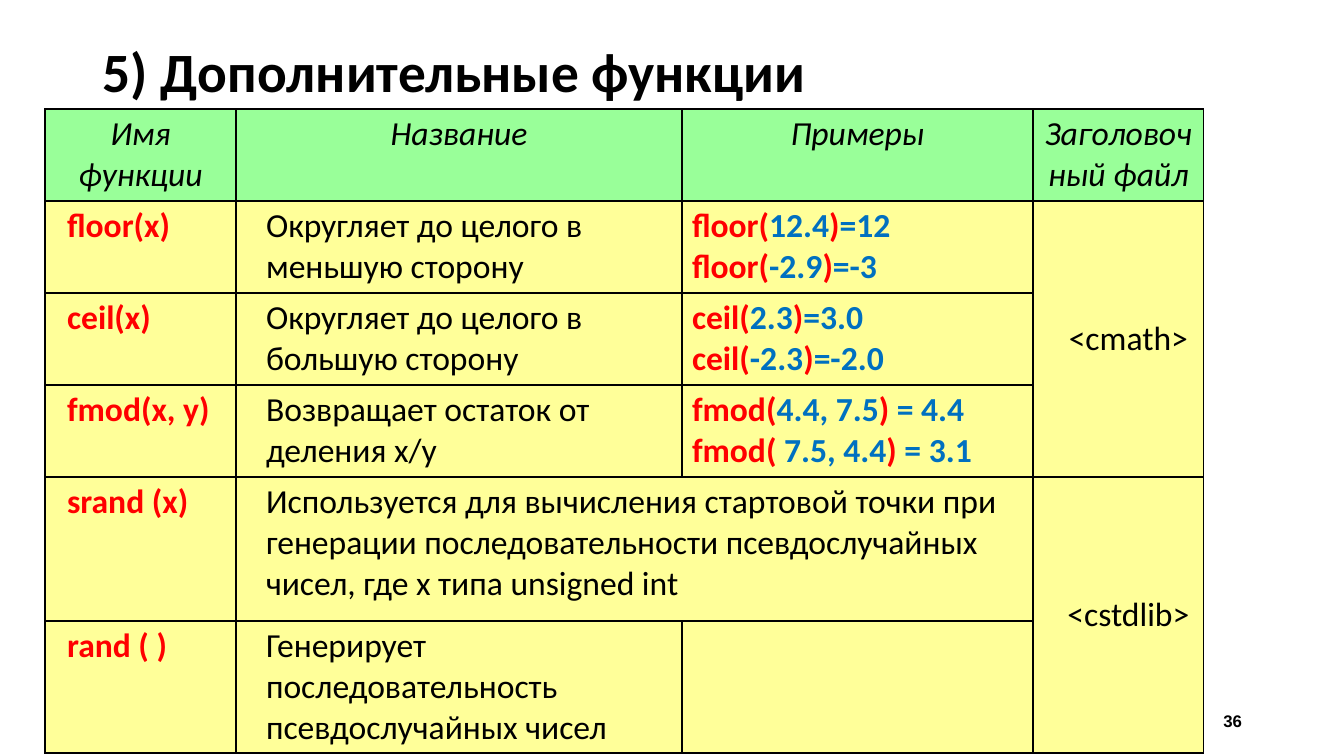
from pptx import Presentation
from pptx.dml.color import RGBColor as RGB
from pptx.enum.text import MSO_ANCHOR as Anchor, PP_ALIGN as Align
from pptx.oxml import parse_xml
from pptx.oxml.ns import nsdecls
from pptx.util import Emu, Pt

BLACK = RGB(0, 0, 0)
RED = RGB(0xFF, 0, 0)
BLUE = RGB(0, 0x70, 0xC0)
GREEN = RGB(0x99, 0xFF, 0x99)
YELLOW = RGB(0xFF, 0xFF, 0x99)

COLS = [191, 446, 351, 171]
ROWS = [92, 92, 92, 92, 144, 132]
HEADS = ["Имя\nфункции", "Название", "Примеры", "Заголовочный файл"]
# Name, meaning, and example lines whose parts alternate red and blue
FUNCS = [
    ("floor(x)", "Округляет до целого в меньшую сторону",
     [("floor(", "12.4", ")", "=12"), ("floor(", "-2.9", ")", "=-3")]),
    ("ceil(x)", "Округляет до целого в большую сторону",
     [("ceil(", "2.3", ")", "=3.0"), ("ceil(", "-2.3", ")", "=-2.0")]),
    ("fmod(x, y)", "Возвращает остаток от деления x/y",
     [("fmod(", "4.4, 7.5", ") ", "= 4.4"),
      ("fmod( ", "7.5, 4.4", ") ", "= 3.1")]),
    ("srand (x)", "Используется для вычисления стартовой точки при генерации "
     "последовательности псевдослучайных чисел, где x типа unsigned int", []),
    ("rand ( )", "Генерирует последовательность псевдослучайных чисел", []),
]
# First row, last row, header file
FILES = [(1, 3, "<cmath>"), (4, 5, "<cstdlib>")]


def px(n):
    return Emu(round(n * 914400 / 100.8))


class Deck:
    def __init__(self):
        self.show = Presentation()
        self.show.slide_width, self.show.slide_height = px(1344), px(756)
        self.slide = self.show.slides.add_slide(self.show.slide_layouts[6])

    def style(self, para, size=24, color=BLACK, face="Calibri", bold=False,
              italic=False, align=Align.LEFT, indent=0):
        if indent:
            para._p.get_or_add_pPr().set("marL", str(px(indent)))
        para.alignment = align
        font = para.font
        font.name, font.size, font.color.rgb = face, Pt(size), color
        font.bold, font.italic = bold, italic

    def text(self, box, words, **look):
        frame = self.slide.shapes.add_textbox(*map(px, box)).text_frame
        frame.word_wrap = True
        frame.vertical_anchor = Anchor.MIDDLE
        para = frame.paragraphs[0]
        para.text = words
        self.style(para, **look)
        return para

    def table(self, left, top, cols, rows):
        shape = self.slide.shapes.add_table(
            len(rows), len(cols), px(left), px(top), px(sum(cols)), px(sum(rows)))
        grid = shape.table
        grid.first_row = grid.horz_banding = False
        for col, wide in zip(grid.columns, cols):
            col.width = px(wide)
        for i, (row, high) in enumerate(zip(grid.rows, rows)):
            row.height = px(high)
            for cell in row.cells:
                self.border(cell)
                cell.fill.solid()
                cell.fill.fore_color.rgb = YELLOW if i else GREEN
                self.style(cell.text_frame.paragraphs[0])
        return grid

    def border(self, cell):
        props = cell._tc.get_or_add_tcPr()
        for side in "LRTB":
            props.append(parse_xml(
                f'<a:ln{side} {nsdecls("a")} w="12700"><a:solidFill>'
                f'<a:srgbClr val="{BLACK}"/></a:solidFill></a:ln{side}>'))

    def fill(self, cell, words, **look):
        cell.text_frame.text = words
        for para in cell.text_frame.paragraphs:
            self.style(para, **look)

    def code(self, cell, lines):
        """Write lines of parts that alternate red and blue."""
        para = cell.text_frame.paragraphs[0]
        self.style(para, bold=True)
        for i, line in enumerate(lines):
            if i:
                para.add_line_break()
            for j, part in enumerate(line):
                run = para.add_run()
                run.text = part
                run.font.color.rgb = BLUE if j % 2 else RED


def main():
    deck = Deck()
    title = deck.text((93, 40, 1159, 69), "5) Дополнительные функции",
                      size=39.6, bold=True)
    title.line_spacing = 0.9
    deck.text((950, 701, 302, 40), "36", size=12, face="Arial", bold=True,
              align=Align.RIGHT)

    grid = deck.table(45, 109, COLS, ROWS)
    for i, head in enumerate(HEADS):
        deck.fill(grid.cell(0, i), head, italic=True, align=Align.CENTER)
    for i, (name, sense, lines) in enumerate(FUNCS, 1):
        deck.fill(grid.cell(i, 0), name, color=RED, bold=True, indent=12)
        grid.cell(i, 0).text_frame.paragraphs[0].level = 1
        deck.fill(grid.cell(i, 1), sense, indent=20)
        if lines:
            deck.code(grid.cell(i, 2), lines)
    grid.cell(4, 1).merge(grid.cell(4, 2))
    for first, last, name in FILES:
        cell = grid.cell(first, 3)
        cell.merge(grid.cell(last, 3))
        cell.vertical_anchor = Anchor.MIDDLE
        deck.fill(cell, name, align=Align.CENTER, indent=20)
    deck.show.save("out.pptx")


if __name__ == "__main__":
    main()
